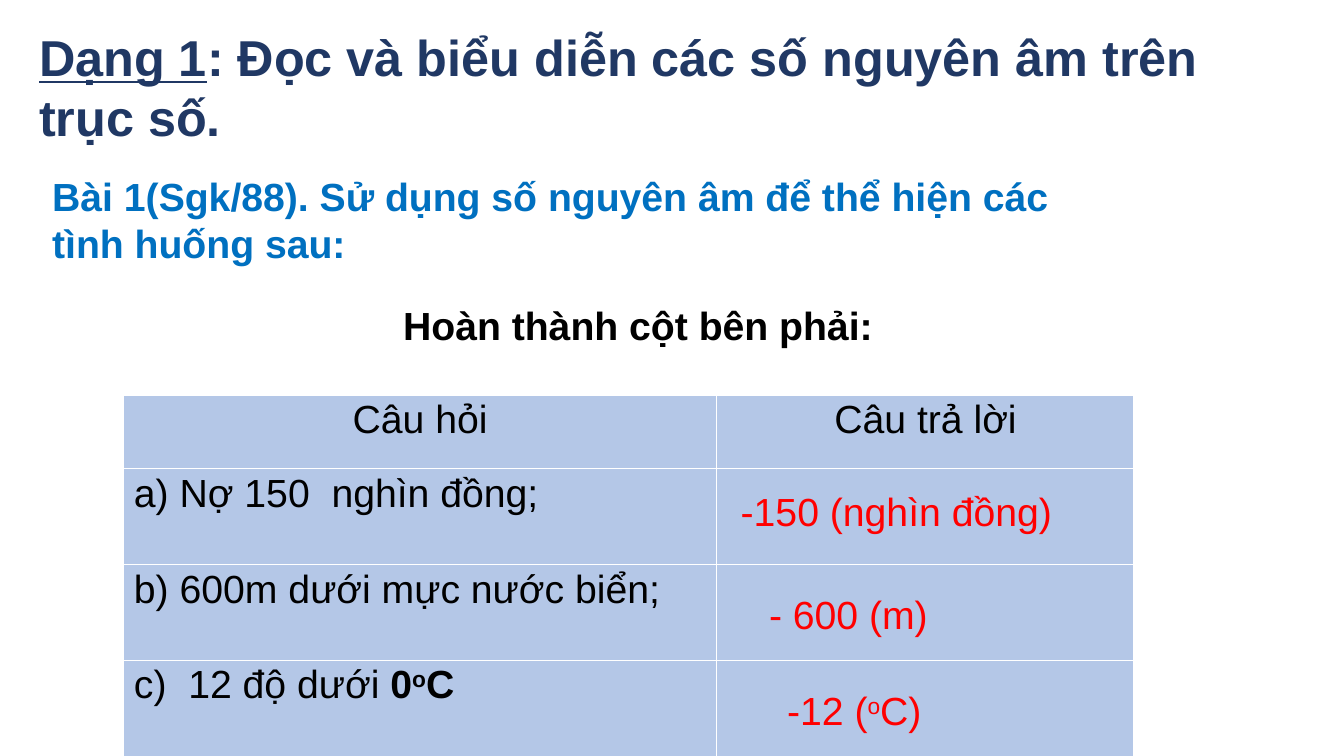
import dataclasses
import typing

import lxml.etree
import pptx
import pptx.dml.color
import pptx.enum.text
import pptx.oxml.ns
import pptx.util

Pt = pptx.util.Pt
Align = pptx.enum.text.PP_ALIGN


@dataclasses.dataclass(frozen=True)
class Theme:
    font: str = "Arial"
    navy: str = "203864"
    blue: str = "0070C0"
    black: str = "000000"
    red: str = "FF0000"
    cell: str = "B4C7E7"
    rule: str = "FFFFFF"
    title: int = 36
    body: int = 28


THEME = Theme()


@dataclasses.dataclass(frozen=True)
class Run:
    text: str
    bold: bool = False
    under: bool = False
    raised: bool = False


@dataclasses.dataclass(frozen=True)
class Label:
    left: float
    top: float
    width: float
    height: float
    runs: tuple[Run, ...]
    color: str
    size: int = THEME.body
    align: Align = Align.LEFT
    wrap: bool = True
    pitch: float = 1.0


LABELS = (
    Label(20.9, 15.1, 902.2, 94.3,
          (Run("Dạng 1", bold=True, under=True),
           Run(": Đọc và biểu diễn các số nguyên âm trên trục số.", bold=True)),
          THEME.navy, THEME.title),
    Label(30.2, 119.5, 779.8, 74.9,
          (Run("Bài 1(Sgk/88). Sử dụng số nguyên âm để thể hiện các "
               "tình huống sau:", bold=True),), THEME.blue),
    Label(102.2, 211.7, 707, 41,
          (Run("Hoàn thành cột bên phải:", bold=True),),
          THEME.black, align=Align.CENTER),
)

ANSWERS = (
    Label(522, 344.9, 239.8, 41, (Run("-150 (nghìn đồng)"),),
          THEME.red, wrap=False),
    Label(542.2, 415.4, 137.5, 43.9, (Run("- 600 (m)"),),
          THEME.red, wrap=False, pitch=1.07),
    Label(555.1, 484.6, 121, 41,
          (Run("-12 ("), Run("o", raised=True), Run("C)")),
          THEME.red, wrap=False, pitch=1.07),
)

HEADS = ("Câu hỏi", "Câu trả lời")
ASKS = (
    (Run("a) Nợ 150  nghìn đồng;"),),
    (Run("b) 600m dưới mực nước biển;"),),
    (Run("c)  12 độ dưới "), Run("0", bold=True),
     Run("o", bold=True, raised=True), Run("C", bold=True)),
)
COLS = (424, 298)
HEAD_ROW, ASK_ROW = 52.5, 68.4
TABLE_LEFT, TABLE_TOP = 88.1, 282.4


def shade(code: str) -> pptx.dml.color.RGBColor:
    return pptx.dml.color.RGBColor.from_string(code)


def write(para: typing.Any, runs: tuple[Run, ...], size: int, color: str) -> None:
    for part in runs:
        run = para.add_run()
        run.text = part.text
        font = run.font
        font.name, font.size = THEME.font, Pt(size)
        font.bold, font.underline = part.bold, part.under
        font.color.rgb = shade(color)
        if part.raised:
            run._r.get_or_add_rPr().set("baseline", "30000")


def add_label(slide: typing.Any, label: Label) -> None:
    box = slide.shapes.add_textbox(
        Pt(label.left), Pt(label.top), Pt(label.width), Pt(label.height))
    frame = box.text_frame
    frame.word_wrap = label.wrap
    frame.auto_size = pptx.enum.text.MSO_AUTO_SIZE.SHAPE_TO_FIT_TEXT
    para = frame.paragraphs[0]
    para.alignment = label.align
    para.line_spacing = label.pitch
    write(para, label.runs, label.size, label.color)


def style_cell(cell: typing.Any) -> None:
    """Give a cell its fill, margins and four white borders."""
    cell.fill.solid()
    cell.fill.fore_color.rgb = shade(THEME.cell)
    cell.margin_left = cell.margin_right = Pt(5.4)
    cell.margin_top = cell.margin_bottom = Pt(0)
    props = cell._tc.get_or_add_tcPr()
    qn = pptx.oxml.ns.qn
    for spot, side in enumerate("LRTB"):
        line = lxml.etree.Element(qn(f"a:ln{side}"), w=str(Pt(1)))
        fill = lxml.etree.SubElement(line, qn("a:solidFill"))
        lxml.etree.SubElement(fill, qn("a:srgbClr"), val=THEME.rule)
        props.insert(spot, line)


def fill_cell(cell: typing.Any, runs: tuple[Run, ...], align: Align) -> None:
    para = cell.text_frame.paragraphs[0]
    para.alignment = align
    para.line_spacing = 1.07
    if align == Align.LEFT:
        para._p.get_or_add_pPr().set("marL", str(Pt(2.2)))
    write(para, runs, THEME.body, THEME.black)


def add_grid(slide: typing.Any) -> None:
    rows = (HEAD_ROW,) + (ASK_ROW,) * len(ASKS)
    table = slide.shapes.add_table(
        len(rows), len(COLS), Pt(TABLE_LEFT), Pt(TABLE_TOP),
        Pt(sum(COLS)), Pt(sum(rows))).table
    table.first_row = table.horz_banding = False
    for col, width in zip(table.columns, COLS):
        col.width = Pt(width)
    for row, height in zip(table.rows, rows):
        row.height = Pt(height)
    for cell in table.iter_cells():
        style_cell(cell)
    for col, head in enumerate(HEADS):
        fill_cell(table.cell(0, col), (Run(head),), Align.CENTER)
    for row, ask in enumerate(ASKS, 1):
        fill_cell(table.cell(row, 0), ask, Align.LEFT)


def main() -> None:
    deck = pptx.Presentation()
    deck.slide_width, deck.slide_height = Pt(960), Pt(540)
    slide = deck.slides.add_slide(deck.slide_layouts[6])
    for label in LABELS:
        add_label(slide, label)
    add_grid(slide)
    for answer in ANSWERS:
        add_label(slide, answer)
    deck.save("out.pptx")


if __name__ == "__main__":
    main()
